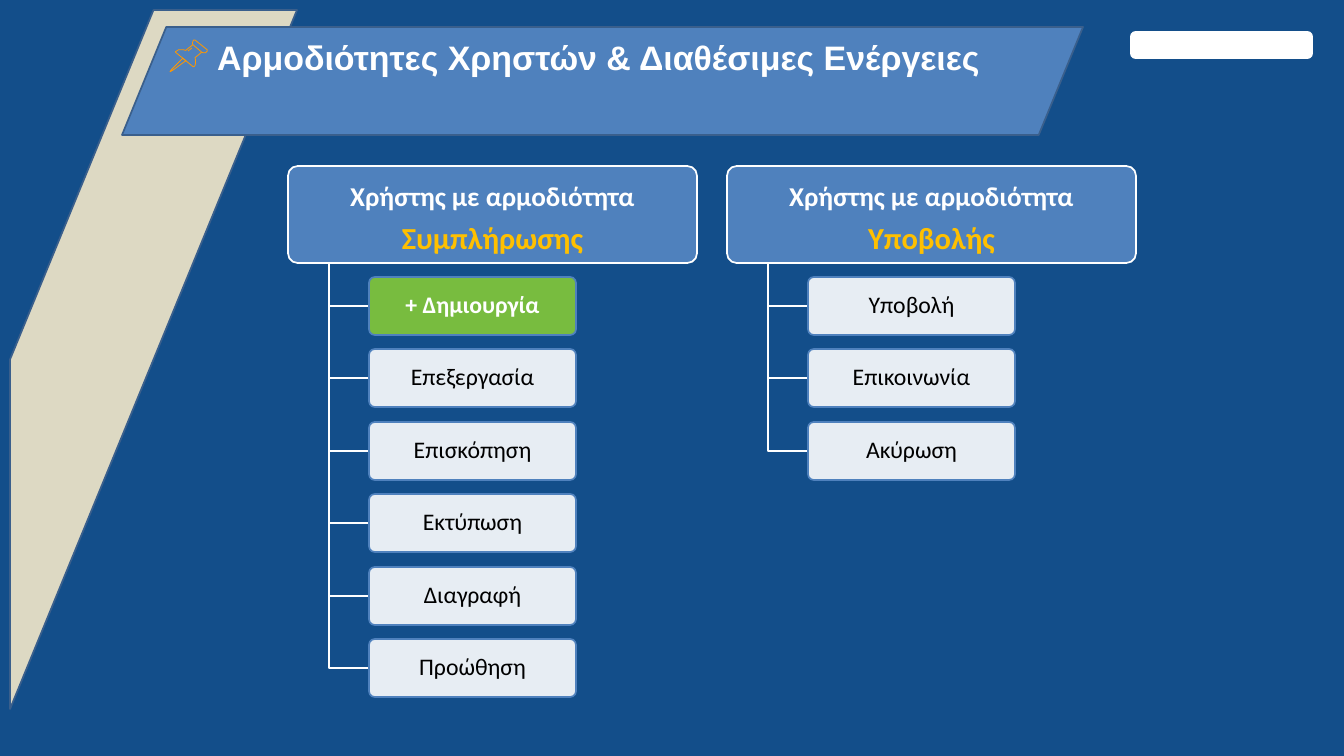
"""Build a slide of user roles and the actions available to each."""
from dataclasses import dataclass

import lxml.etree
import pptx
import pptx.dml.color
import pptx.enum.shapes
import pptx.enum.text
import pptx.oxml.ns
import pptx.shapes.autoshape
import pptx.slide
import pptx.text.text
import pptx.util

EMU_PER_PX = 14966
PRESET = pptx.enum.shapes.MSO_SHAPE
NAVY, BLUE, DARK_BLUE, SAND = "134E8A", "4F81BD", "3A5F8C", "DDD9C3"
WHITE, BLACK, GOLD, GREEN, ORANGE = "FFFFFF", "000000", "FFC000", "83C937", "FF9800"

HEADER_TOP, HEADER_WIDTH, HEADER_HEIGHT = 166, 409, 97
TRUNK_INDENT, ACTION_INDENT = 41, 81
ACTION_TOP, ACTION_WIDTH, ACTION_HEIGHT = 277, 207, 58
ACTION_PITCH = 362 / 5
FIRST_ROLE_LEFT, ROLE_PITCH = 288, 439
PIN_LEFT, PIN_TOP, PIN_UNIT = 170, 40, 0.61


@dataclass(frozen=True)
class Action:
    label: str
    fill: str = WHITE
    color: str = BLACK
    bold: bool = False


@dataclass(frozen=True)
class Role:
    name: str
    actions: tuple[Action, ...]


@dataclass(frozen=True)
class PinPart:
    points: tuple[tuple[int, int], ...]
    closed: bool = True


ROLES = (
    Role("Συμπλήρωσης", (
        Action("+ Δημιουργία", GREEN, WHITE, True),
        Action("Επεξεργασία"),
        Action("Επισκόπηση"),
        Action("Εκτύπωση"),
        Action("Διαγραφή"),
        Action("Προώθηση"),
    )),
    Role("Υποβολής", (
        Action("Υποβολή"),
        Action("Επικοινωνία"),
        Action("Ακύρωση"),
    )),
)

PIN_PARTS = (
    PinPart(((21, 30), (2, 49), (0, 52), (4, 50), (26, 34))),
    PinPart(((38, 8), (52, 20), (55, 21), (58, 21), (60, 19), (61, 18), (61, 16),
             (41, 0), (39, 0), (38, 1), (37, 4), (37, 7))),
    PinPart(((37, 8), (26, 17), (22, 16), (14, 16), (11, 18), (9, 19), (9, 20), (37, 43),
             (39, 44), (41, 42), (42, 38), (42, 33), (41, 29), (52, 20)), closed=False),
)


def px(length: float) -> pptx.util.Emu:
    return pptx.util.Emu(round(length * EMU_PER_PX))


def rgb(color: str) -> pptx.dml.color.RGBColor:
    return pptx.dml.color.RGBColor.from_string(color)


def add_run(paragraph: pptx.text.text._Paragraph, text: str, *, size: int, color: str,
            bold: bool = False, font: str = "Calibri") -> None:
    run = paragraph.add_run()
    run.text = text
    run.font.name = font
    run.font.size = pptx.util.Pt(size)
    run.font.bold = bold
    run.font.color.rgb = rgb(color)


def add_box(slide: pptx.slide.Slide, preset: PRESET, left: int, top: int, width: int, height: int,
            *, fill: str, line: str, adjustment: float | None = None,
            opacity: int = 100) -> pptx.shapes.autoshape.Shape:
    box = slide.shapes.add_shape(preset, px(left), px(top), px(width), px(height))
    box.shadow.inherit = False
    box.fill.solid()
    box.fill.fore_color.rgb = rgb(fill)
    box.line.color.rgb = rgb(line)
    box.line.width = pptx.util.Pt(2)
    if adjustment is not None:
        box.adjustments[0] = adjustment
    if opacity < 100:
        qn = pptx.oxml.ns.qn
        color = box.element.spPr.find(qn("a:solidFill"))[0]
        lxml.etree.SubElement(color, qn("a:alpha"), val=str(opacity * 1000))
    return box


def add_outline(slide: pptx.slide.Slide, points: tuple[tuple[int, int], ...], *, color: str,
                width: float, closed: bool = False, left: int = 0, top: int = 0,
                unit: float = 1) -> None:
    builder = slide.shapes.build_freeform(*points[0], scale=unit * EMU_PER_PX)
    builder.add_line_segments(points[1:], close=closed)
    outline = builder.convert_to_shape(px(left), px(top))
    outline.shadow.inherit = False
    outline.fill.background()
    outline.line.color.rgb = rgb(color)
    outline.line.width = pptx.util.Pt(width)


def centred_paragraph(box: pptx.shapes.autoshape.Shape,
                      spacing: float) -> pptx.text.text._Paragraph:
    frame = box.text_frame
    frame.word_wrap = True
    frame.vertical_anchor = pptx.enum.text.MSO_ANCHOR.MIDDLE
    frame.margin_left = frame.margin_right = px(6)
    frame.margin_top = frame.margin_bottom = px(4)
    paragraph = frame.paragraphs[0]
    paragraph.alignment = pptx.enum.text.PP_ALIGN.CENTER
    paragraph.line_spacing = spacing
    return paragraph


def add_heading(slide: pptx.slide.Slide) -> None:
    add_box(slide, PRESET.DIAGONAL_STRIPE, 10, 10, 287, 699, fill=SAND, line=DARK_BLUE)
    banner = add_box(slide, PRESET.PARALLELOGRAM, 122, 27, 961, 108,
                     fill=BLUE, line=DARK_BLUE, adjustment=0.41)
    title = slide.shapes.title
    banner.element.addnext(title.element)
    title.left, title.top, title.width, title.height = map(px, (211, 34, 798, 89))
    frame = title.text_frame
    frame.word_wrap = True
    frame.auto_size = pptx.enum.text.MSO_AUTO_SIZE.NONE
    frame.vertical_anchor = pptx.enum.text.MSO_ANCHOR.TOP
    paragraph = frame.paragraphs[0]
    paragraph.alignment = pptx.enum.text.PP_ALIGN.LEFT
    add_run(paragraph, "Αρμοδιότητες Χρηστών & Διαθέσιμες Ενέργειες",
            size=40, color=WHITE, bold=True, font="Arial")


def add_pin(slide: pptx.slide.Slide) -> None:
    for part in PIN_PARTS:
        add_outline(slide, part.points, color=ORANGE, width=0.96, closed=part.closed,
                    left=PIN_LEFT, top=PIN_TOP, unit=PIN_UNIT)
    shine = slide.shapes.add_connector(
        pptx.enum.shapes.MSO_CONNECTOR.STRAIGHT, *map(px, (188, 51, 192, 48)))
    shine.line.color.rgb = rgb(ORANGE)
    shine.line.width = pptx.util.Pt(0.96)
    lxml.etree.SubElement(shine.element.spPr, pptx.oxml.ns.qn("a:effectLst"))


def add_role(slide: pptx.slide.Slide, role: Role, left: int) -> None:
    header = add_box(slide, PRESET.ROUNDED_RECTANGLE, left, HEADER_TOP, HEADER_WIDTH,
                     HEADER_HEIGHT, fill=BLUE, line=WHITE, adjustment=0.1)
    paragraph = centred_paragraph(header, 1.2)
    add_run(paragraph, "Χρήστης με αρμοδιότητα", size=32, color=WHITE, bold=True)
    paragraph.add_line_break()
    add_run(paragraph, role.name, size=36, color=GOLD, bold=True)

    trunk, action_left = left + TRUNK_INDENT, left + ACTION_INDENT
    for row, action in enumerate(role.actions):
        top = ACTION_TOP + round(row * ACTION_PITCH)
        middle = top + ACTION_HEIGHT // 2
        elbow = ((trunk, HEADER_TOP + HEADER_HEIGHT), (trunk, middle), (action_left, middle))
        add_outline(slide, elbow, color=WHITE, width=2)
        box = add_box(slide, PRESET.ROUNDED_RECTANGLE, action_left, top, ACTION_WIDTH,
                      ACTION_HEIGHT, fill=action.fill, line=BLUE, adjustment=0.1, opacity=90)
        add_run(centred_paragraph(box, 0.9), action.label,
                size=28, color=action.color, bold=action.bold)


def main() -> None:
    deck = pptx.Presentation()
    deck.slide_width, deck.slide_height = px(1344), px(756)
    slide = deck.slides.add_slide(deck.slide_layouts[5])
    slide.background.fill.solid()
    slide.background.fill.fore_color.rgb = rgb(NAVY)
    add_box(slide, PRESET.ROUNDED_RECTANGLE, 1131, 32, 181, 26, fill=WHITE, line=WHITE)
    add_heading(slide)
    add_pin(slide)
    for column, role in enumerate(ROLES):
        add_role(slide, role, FIRST_ROLE_LEFT + column * ROLE_PITCH)
    deck.save("out.pptx")


if __name__ == "__main__":
    main()
